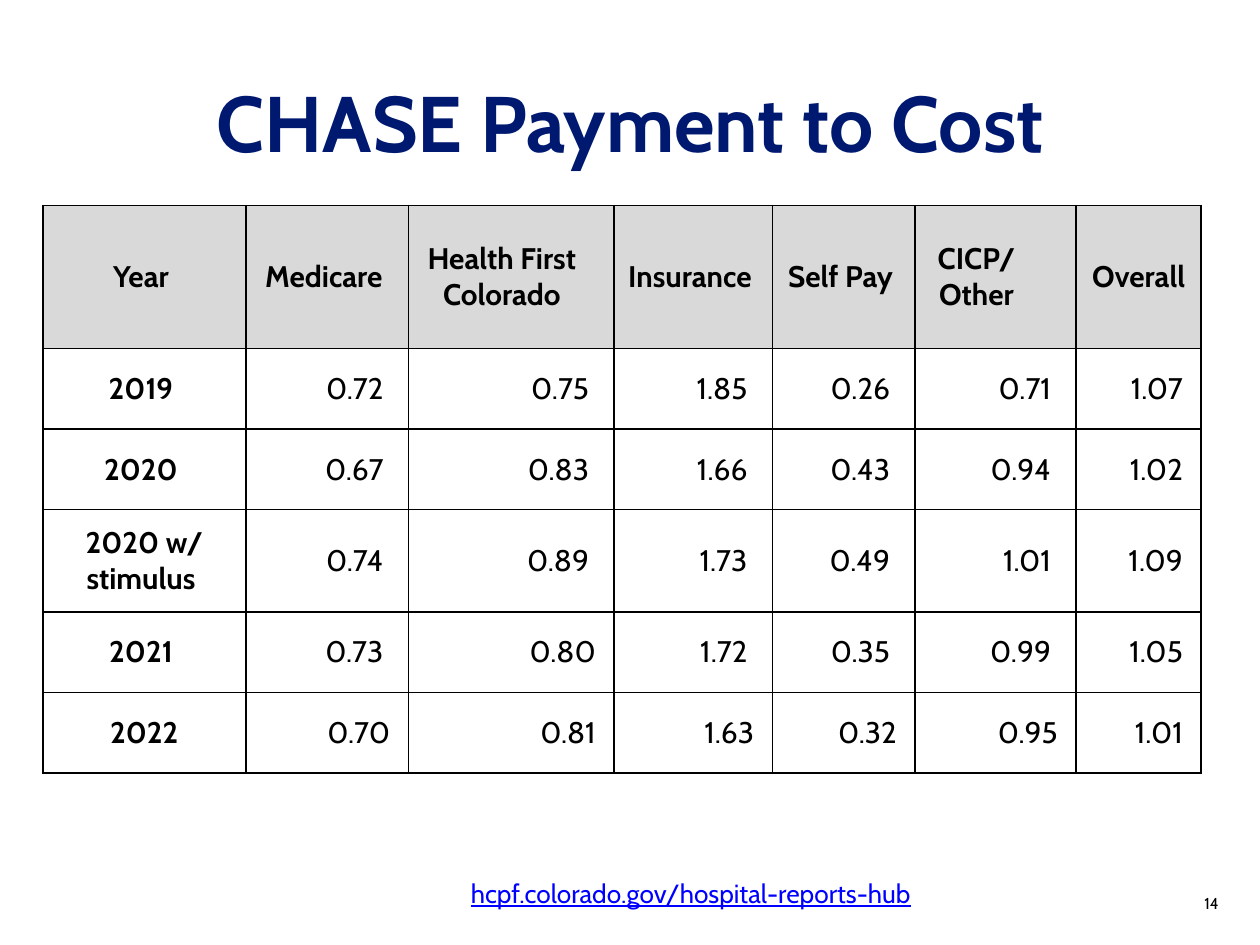
import pptx
import pptx.util
import pptx.dml.color
import pptx.enum.text
import pptx.oxml
import pptx.oxml.ns

Pt = pptx.util.Pt
RGB = pptx.dml.color.RGBColor
ALIGN = pptx.enum.text.PP_ALIGN
ANCHOR = pptx.enum.text.MSO_ANCHOR

NAVY = RGB(0x00, 0x19, 0x70)
BLACK = RGB(0x00, 0x00, 0x00)
GREY = RGB(0xD9, 0xD9, 0xD9)
LINK_BLUE = RGB(0x00, 0x00, 0xFF)

COLS = [116, 93, 117.5, 90.5, 81.5, 92, 71.5]
ROWS = [82, 46, 46, 58.5, 46, 46]
HEADER = ["Year ", "Medicare ", "Health First \nColorado ", "Insurance ",
          "Self Pay ", "CICP/ \nOther ", "Overall"]
BODY = [
    ["2019 ", "0.72 ", "0.75 ", "1.85 ", "0.26 ", "0.71 ", "1.07"],
    ["2020 ", "0.67 ", "0.83 ", "1.66 ", "0.43 ", "0.94 ", "1.02"],
    ["2020 w/ stimulus ", "0.74 ", "0.89 ", "1.73 ", "0.49 ", "1.01 ", "1.09"],
    ["2021 ", "0.73 ", "0.80", "1.72 ", "0.35 ", "0.99 ", "1.05"],
    ["2022", "0.70", "0.81", "1.63", "0.32", "0.95", "1.01"],
]
# Right indents of the first lines of the two-line headings, by column
HEADING_INDENTS = {2: 7, 5: 18}


class SlideBuilder:
    font = "Cabin"
    cell_margin = 5
    number_margin = 10.5

    def __init__(self, slide):
        self.s = slide

    def run(self, p, text, size, color, bold=False, underline=False):
        r = p.add_run()
        r.text = text
        f = r.font
        f.name, f.size, f.bold, f.underline = self.font, Pt(size), bold, underline
        f.color.rgb = color

    def text(self, x, y, w, h, text, size, color, align=ALIGN.LEFT,
             anchor=ANCHOR.MIDDLE, inset=3.6, spacing=None, **style):
        sp = self.s.shapes.add_textbox(Pt(x), Pt(y), Pt(w), Pt(h))
        tf = sp.text_frame
        tf.word_wrap = True
        tf.vertical_anchor = anchor
        tf.margin_left = tf.margin_right = Pt(7.2)
        tf.margin_top = tf.margin_bottom = Pt(inset)
        p = tf.paragraphs[0]
        p.alignment = align
        p.line_spacing = spacing
        self.run(p, text, size, color, **style)

    def border(self, cell):
        tc_pr = cell._tc.get_or_add_tcPr()
        for i, side in enumerate(("lnL", "lnR", "lnT", "lnB")):
            tc_pr.insert(i, pptx.oxml.parse_xml(
                f'<a:{side} {pptx.oxml.ns.nsdecls("a")} w="{Pt(1)}"><a:solidFill>'
                f'<a:srgbClr val="{BLACK}"/></a:solidFill></a:{side}>'))

    def cell(self, cell, text, heading, number, first_indent=0):
        cell.vertical_anchor = ANCHOR.MIDDLE
        cell.margin_left = cell.margin_top = cell.margin_bottom = Pt(self.cell_margin)
        cell.margin_right = Pt(self.number_margin if number else self.cell_margin)
        if heading:
            cell.fill.solid()
            cell.fill.fore_color.rgb = GREY
        else:
            cell.fill.background()
        self.border(cell)
        tf = cell.text_frame
        for i, line in enumerate(text.split("\n")):
            p = tf.add_paragraph() if i else tf.paragraphs[0]
            p.alignment = ALIGN.RIGHT if number else ALIGN.CENTER
            if first_indent and i == 0:
                p._p.get_or_add_pPr().set("marR", str(Pt(first_indent)))
            self.run(p, line, 17, BLACK, bold=not number)

    def table(self, x, y, cols, rows, data):
        table = self.s.shapes.add_table(len(rows), len(cols), Pt(x), Pt(y),
                                        Pt(sum(cols)), Pt(sum(rows))).table
        table.first_row = table.horz_banding = False
        for column, width in zip(table.columns, cols):
            column.width = Pt(width)
        for row, height in zip(table.rows, rows):
            row.height = Pt(height)
        for i, values in enumerate(data):
            for j, value in enumerate(values):
                heading = i == 0
                self.cell(table.cell(i, j), value, heading, not heading and j > 0,
                          HEADING_INDENTS.get(j, 0) if heading else 0)


def main():
    prs = pptx.Presentation()
    prs.slide_width, prs.slide_height = Pt(720), Pt(540)
    b = SlideBuilder(prs.slides.add_slide(prs.slide_layouts[6]))
    b.text(49.68, 34.56, 620.64, 75.6, "CHASE Payment to Cost", 45, NAVY,
           align=ALIGN.CENTER, spacing=0.9, bold=True)
    b.text(541.5, 502, 162, 28.8, "14", 9, BLACK, align=ALIGN.RIGHT)
    b.table(24.5, 117.3, COLS, ROWS, [HEADER] + BODY)
    b.text(262, 496, 404, 28.8, "hcpf.colorado.gov/hospital-reports-hub", 15,
           LINK_BLUE, anchor=ANCHOR.TOP, inset=7.2, spacing=0.9, underline=True)
    prs.save("out.pptx")


if __name__ == "__main__":
    main()
